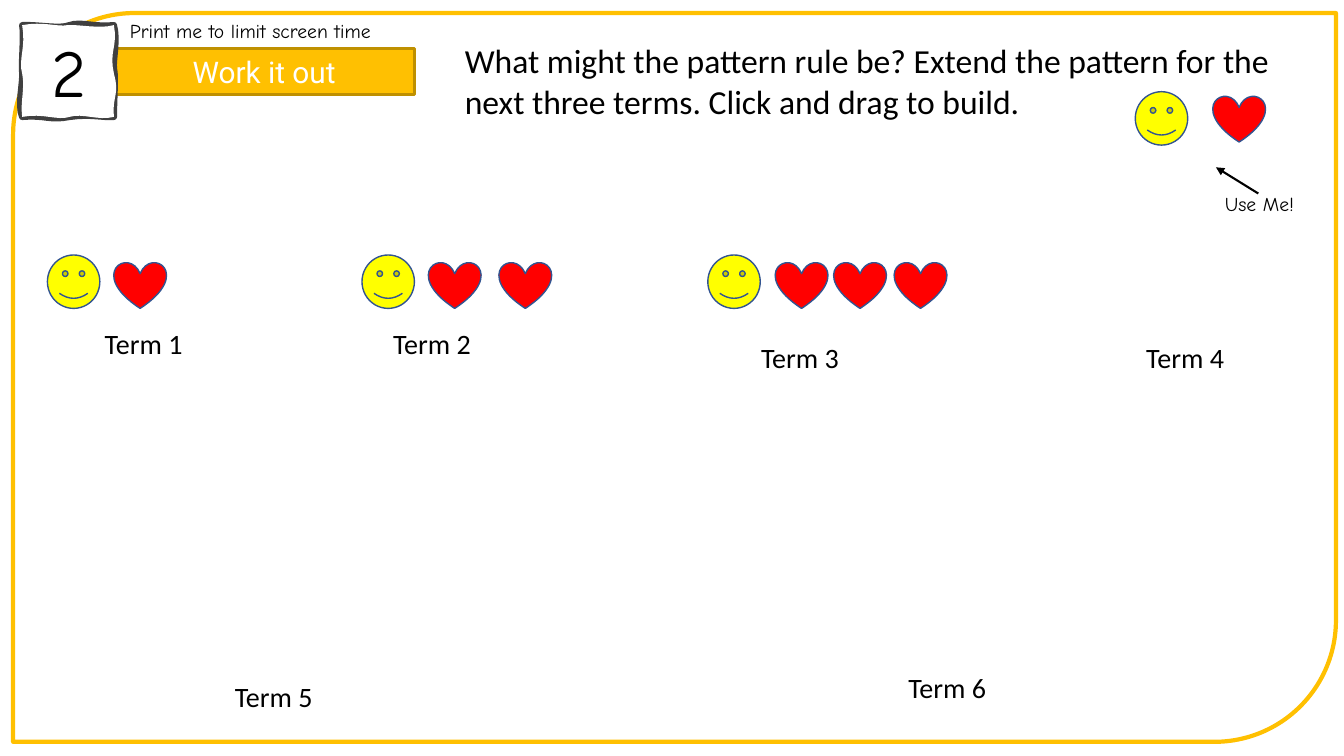
from dataclasses import dataclass

from lxml import etree
from pptx import Presentation, util as u
from pptx.dml.color import RGBColor
from pptx.enum import shapes, text
from pptx.oxml.ns import qn

COLOURS = {"gold": "FFC001", "dark_gold": "BF9000", "grey": "404040", "blue": "325491",
           "yellow": "FFFF00", "red": "FF0000", "white": "FFFFFF", "black": "000000"}
SHAPE = shapes.MSO_SHAPE
CENTRE = text.PP_ALIGN.CENTER
TOP, MIDDLE = text.MSO_ANCHOR.TOP, text.MSO_ANCHOR.MIDDLE


@dataclass
class Label:
    words: str
    left: float
    top: float
    width: float
    height: float = 0.44
    size: float = 20
    font: str = "Calibri"


@dataclass
class Term:
    face: float
    hearts: tuple
    face_top: float = 2.53
    heart_top: float = 2.6


LABELS = [
    Label("Term 1", 0.94, 3.19, 1.11),
    Label("Term 2", 3.8, 3.19, 0.99),
    Label("Term 3", 7.45, 3.33, 1.02),
    Label("Term 4", 11.27, 3.33, 0.99),
    Label("Term 5", 2.23, 6.69, 0.99),
    Label("Term 6", 8.91, 6.6, 0.99),
    Label("Print me to limit screen time", 1.19, 0.14, 3.14, 0.34, 14, "Comic Neue"),
    Label("Use Me!", 12.05, 1.86, 1, 0.34, 14, "Comic Neue"),
]
QUESTION = Label("What might the pattern rule be? Extend the pattern for the next three terms. "
                 "Click and drag to build.", 4.51, 0.35, 8.24, 0.91, 24)
TERMS = [Term(0.47, (1.13,)), Term(3.59, (4.25, 4.95)), Term(7.02, (7.69, 8.27, 8.87)),
         Term(11.26, (12.03,), 0.91, 0.95)]

# Each row holds two control points and an end point; every outline starts at CORNER.
CORNER = (0.22, 0.25)
CARD_EDGE = [
    (0.36, 0.24, 0.59, 0.29, 0.69, 0.25), (0.8, 0.21, 0.93, 0.27, 1.13, 0.25),
    (1.17, 0.4, 1.12, 0.59, 1.13, 0.68), (1.15, 0.77, 1.13, 0.95, 1.13, 1.16),
    (1.03, 1.17, 0.9, 1.13, 0.69, 1.16), (0.49, 1.2, 0.45, 1.14, 0.22, 1.16),
    (0.17, 1.04, 0.23, 0.82, 0.22, 0.72), (0.21, 0.62, 0.24, 0.35, 0.22, 0.25)]
CARD_FACE = [
    (0.43, 0.21, 0.57, 0.27, 0.67, 0.25), (0.77, 0.24, 0.99, 0.29, 1.13, 0.25),
    (1.17, 0.46, 1.08, 0.51, 1.13, 0.73), (1.19, 0.94, 1.11, 0.96, 1.13, 1.16),
    (0.97, 1.2, 0.82, 1.12, 0.69, 1.16), (0.57, 1.2, 0.43, 1.12, 0.22, 1.16),
    (0.2, 1.01, 0.25, 0.87, 0.22, 0.73), (0.18, 0.59, 0.26, 0.47, 0.22, 0.25)]


def rgb(name: str) -> RGBColor:
    return RGBColor.from_string(COLOURS[name])


def paint(sp, fill: str = "", line: str = "", weight: float = 1) -> None:
    """Set fill and line; an empty colour name means none."""
    sp.shadow.inherit = False
    if fill:
        sp.fill.solid()
        sp.fill.fore_color.rgb = rgb(fill)
    else:
        sp.fill.background()
    if line:
        sp.line.color.rgb = rgb(line)
        sp.line.width = u.Pt(weight)
    else:
        sp.line.fill.background()


def write(sp, words: str, size: float, font: str, colour: str = "black",
          align=text.PP_ALIGN.LEFT, anchor=TOP) -> None:
    tf = sp.text_frame
    for key, value in {"word_wrap": True, "auto_size": text.MSO_AUTO_SIZE.NONE,
                       "vertical_anchor": anchor}.items():
        setattr(tf, key, value)
    p = tf.paragraphs[0]
    p.alignment = align
    r = p.add_run()
    r.text = words
    for key, value in {"size": u.Pt(size), "name": font}.items():
        setattr(r.font, key, value)
    r.font.color.rgb = rgb(colour)


def add_preset(s, kind, left: float, top: float, width: float, height: float, **look):
    sp = s.shapes.add_shape(kind, *map(u.Inches, (left, top, width, height)))
    paint(sp, **look)
    return sp


def add_outline(s, curves: list, steps: int = 8):
    """Draw a closed shape through points sampled along cubic curves."""
    points, (x0, y0) = [], CORNER
    for x1, y1, x2, y2, x3, y3 in curves:
        for i in range(1, steps + 1):
            t = i / steps
            a, b, c, d = (1 - t) ** 3, 3 * t * (1 - t) ** 2, 3 * t * t * (1 - t), t ** 3
            points.append((u.Inches(a * x0 + b * x1 + c * x2 + d * x3),
                           u.Inches(a * y0 + b * y1 + c * y2 + d * y3)))
        x0, y0 = x3, y3
    builder = s.shapes.build_freeform(*map(u.Inches, CORNER))
    builder.add_line_segments(points, close=True)
    return builder.convert_to_shape()


def add_label(s, label: Label) -> None:
    box = map(u.Inches, (label.left, label.top, label.width, label.height))
    write(s.shapes.add_textbox(*box), label.words, label.size, label.font)


def add_term(s, term: Term) -> None:
    add_preset(s, SHAPE.SMILEY_FACE, term.face, term.face_top, 0.52, 0.53,
               fill="yellow", line="blue")
    for left in term.hearts:
        add_preset(s, SHAPE.HEART, left, term.heart_top, 0.52, 0.46, fill="red", line="blue")


def add_arrow(s, x1: float, y1: float, x2: float, y2: float) -> None:
    arrow = s.shapes.add_connector(shapes.MSO_CONNECTOR.STRAIGHT,
                                   *map(u.Inches, (x1, y1, x2, y2)))
    arrow.line.color.rgb = rgb("black")
    arrow.line.width = u.Pt(1.5)
    etree.SubElement(arrow.line._get_or_add_ln(), qn("a:tailEnd"), type="triangle")
    etree.SubElement(arrow._element.spPr, qn("a:effectLst"))


def place_title(s, label: Label) -> None:
    title = s.shapes.title
    for key in ("left", "top", "width", "height"):
        setattr(title, key, u.Inches(getattr(label, key)))
    write(title, label.words, label.size, label.font)


def main() -> None:
    prs = Presentation()
    prs.slide_width, prs.slide_height = u.Inches(13.33), u.Inches(7.5)
    s = prs.slides.add_slide(prs.slide_layouts[5])
    place_title(s, QUESTION)

    add_preset(s, SHAPE.ROUND_2_DIAG_RECTANGLE, 0.13, 0.13, 13.12, 7.23, line="gold", weight=3)
    banner = add_preset(s, SHAPE.RECTANGLE, 1.13, 0.48, 2.98, 0.46,
                        fill="gold", line="dark_gold", weight=2.25)
    write(banner, "Work it out", 21.3, "Roboto", "white", CENTRE, MIDDLE)

    paint(add_outline(s, CARD_EDGE), line="grey", weight=4.5)
    card = add_outline(s, CARD_FACE)
    paint(card, fill="white")
    write(card, "2", 48, "Comic Neue", align=CENTRE, anchor=MIDDLE)

    for label in LABELS:
        add_label(s, label)
    for term in TERMS:
        add_term(s, term)
    add_arrow(s, 12.48, 1.92, 12.06, 1.66)
    prs.save("out.pptx")


if __name__ == "__main__":
    main()
